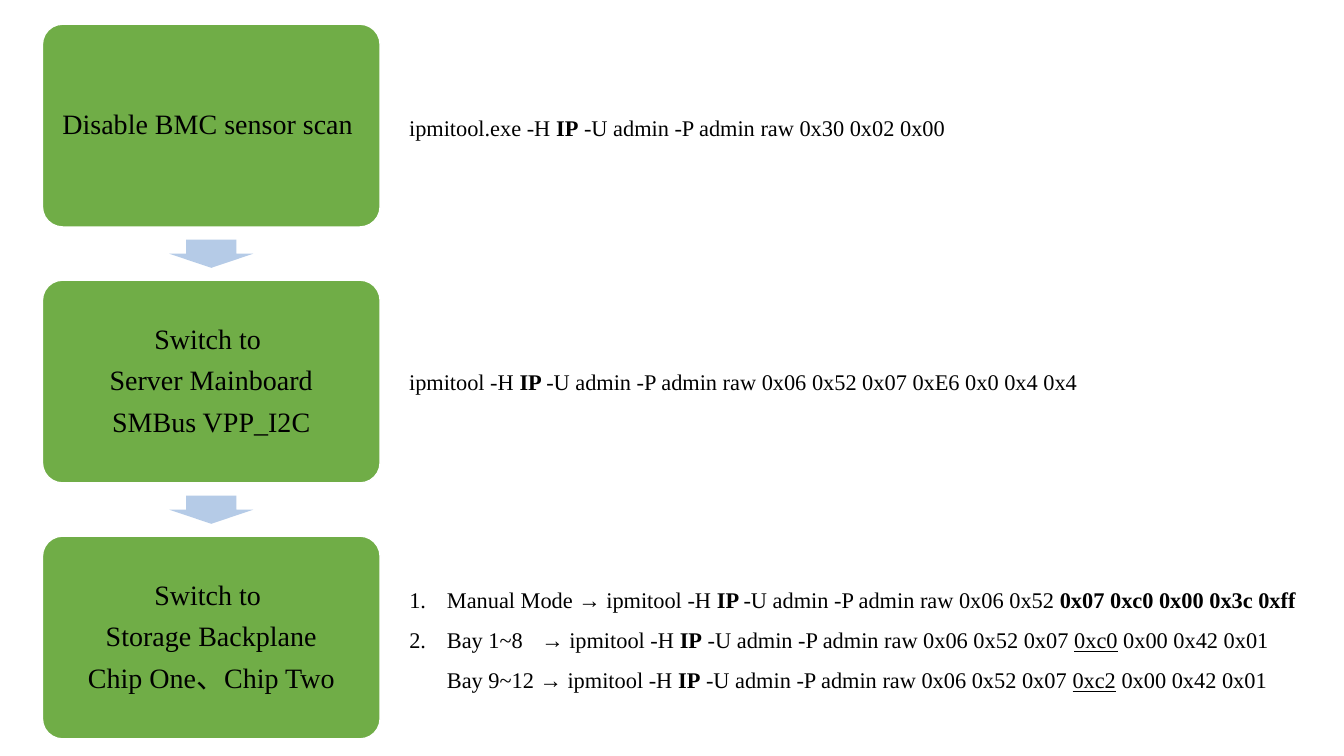
"""Build the slide showing the BMC backplane commands step by step."""

from dataclasses import dataclass

from lxml import etree
from pptx import Presentation
from pptx.dml.color import RGBColor
from pptx.enum.shapes import MSO_SHAPE
from pptx.enum.text import MSO_ANCHOR, MSO_AUTO_SIZE, PP_ALIGN
from pptx.oxml.ns import qn
from pptx.util import Cm, Pt

ROUNDED_BOX = MSO_SHAPE.ROUNDED_RECTANGLE
DOWN_ARROW = MSO_SHAPE.DOWN_ARROW
MIDDLE, TOP = MSO_ANCHOR.MIDDLE, MSO_ANCHOR.TOP
NO_AUTOFIT = MSO_AUTO_SIZE.NONE
CENTER, LEFT = PP_ALIGN.CENTER, PP_ALIGN.LEFT

COLORS = {"box": "70AD47", "arrow": "B5CBE7", "text": "000000", "outline": "FFFFFF"}
FONT = "Times New Roman"
STEP_PITCH = 6.45
BOX_LEFT, BOX_TOP, BOX_WIDTH, BOX_HEIGHT = 1.07, 0.61, 8.51, 5.11
ARROW_WIDTH, ARROW_HEIGHT, ARROW_GAP = 2.11, 0.71, 0.32
COMMAND_LEFT = 10.06
LIST_INDENT = 0.95
ARROW_TAB = 3.33


@dataclass(frozen=True)
class Span:
    text: str
    bold: bool = False
    underline: bool = False


@dataclass(frozen=True)
class Command:
    top: float
    width: float
    spans: tuple[Span, ...]


@dataclass(frozen=True)
class ListItem:
    numbered: bool
    spans: tuple[Span, ...]


def bay_spans(label: str, register: str) -> tuple[Span, ...]:
    """Return the spans of a command that addresses a group of bays."""
    return (
        Span(f"{label}→ ipmitool -H "),
        Span("IP", bold=True),
        Span(" -U admin -P admin raw 0x06 0x52 0x07 "),
        Span(register, underline=True),
        Span(" 0x00 0x42 0x01"),
    )


STEPS = (
    "Disable BMC sensor scan ",
    "Switch to \nServer Mainboard\nSMBus VPP_I2C",
    "Switch to \nStorage Backplane\nChip One、Chip Two",
)
COMMANDS = (
    Command(2.74, 14.76, (
        Span("ipmitool.exe -H "),
        Span("IP", bold=True),
        Span(" -U admin -P admin raw 0x30 0x02 0x00"),
    )),
    Command(9.14, 18.29, (
        Span("ipmitool -H "),
        Span("IP ", bold=True),
        Span("-U admin -P admin raw 0x06 0x52 0x07 0xE6 0x0 0x4 0x4"),
    )),
)
LIST_ITEMS = (
    ListItem(True, (
        Span("Manual Mode → ipmitool -H"),
        Span(" IP ", bold=True),
        Span("-U admin -P admin raw 0x06 0x52 "),
        Span("0x07 0xc0 0x00 0x3c 0xff", bold=True),
    )),
    ListItem(True, bay_spans("Bay 1~8\t", "0xc0")),
    ListItem(False, bay_spans("Bay 9~12 ", "0xc2")),
)


def rgb(name: str) -> RGBColor:
    """Return a named colour."""
    return RGBColor.from_string(COLORS[name])


def format_run(run, size: float) -> None:
    """Apply the slide's font to a run."""
    run.font.name = FONT
    run.font.size = Pt(size)
    run.font.color.rgb = rgb("text")


def add_spans(paragraph, spans: tuple[Span, ...]) -> None:
    """Write styled spans into a paragraph."""
    paragraph.alignment = LEFT
    for span in spans:
        run = paragraph.add_run()
        run.text = span.text
        format_run(run, 16)
        run.font.bold = span.bold
        run.font.underline = span.underline


def add_filled_shape(slide, kind, left: float, top: float, width: float, height: float,
                     color: str):
    """Add a flat filled shape without an outline."""
    shape = slide.shapes.add_shape(kind, Cm(left), Cm(top), Cm(width), Cm(height))
    shape.shadow.inherit = False
    shape.fill.solid()
    shape.fill.fore_color.rgb = rgb(color)
    shape.line.fill.background()
    return shape


def add_step(slide, text: str, top: float) -> None:
    """Add a rounded box holding one step."""
    box = add_filled_shape(slide, ROUNDED_BOX, BOX_LEFT, top, BOX_WIDTH, BOX_HEIGHT, "box")
    box.adjustments[0] = 0.1
    box.line.color.rgb = rgb("outline")
    box.line.width = Pt(1)
    frame = box.text_frame
    frame.word_wrap = True
    frame.vertical_anchor = MIDDLE
    frame.text = text
    for paragraph in frame.paragraphs:
        paragraph.alignment = CENTER
        paragraph.line_spacing = 0.9
        paragraph.space_after = Pt(8)
        for run in paragraph.runs:
            format_run(run, 20)


def add_arrow(slide, top: float) -> None:
    """Add a downward arrow centred under the boxes."""
    left = BOX_LEFT + (BOX_WIDTH - ARROW_WIDTH) / 2
    arrow = add_filled_shape(slide, DOWN_ARROW, left, top, ARROW_WIDTH, ARROW_HEIGHT, "arrow")
    arrow.adjustments[0] = 0.6
    arrow.adjustments[1] = 0.5


def add_command(slide, command: Command) -> None:
    """Add a one-line command beside its step."""
    box = slide.shapes.add_textbox(
        Cm(COMMAND_LEFT), Cm(command.top), Cm(command.width), Cm(0.94))
    box.text_frame.word_wrap = True
    add_spans(box.text_frame.paragraphs[0], command.spans)


def format_list_item(paragraph, numbered: bool) -> None:
    """Set the indent, number and tab stop of a list item."""
    paragraph.line_spacing = 1.5
    paragraph.space_before = Pt(0)
    properties = paragraph._p.get_or_add_pPr()
    properties.set("marL", str(Cm(LIST_INDENT)))
    properties.set("indent", str(-Cm(LIST_INDENT) if numbered else 0))
    if numbered:
        font = etree.SubElement(properties, qn("a:buFont"))
        font.set("typeface", FONT)
        number = etree.SubElement(properties, qn("a:buAutoNum"))
        number.set("type", "arabicPeriod")
    else:
        etree.SubElement(properties, qn("a:buNone"))
    tabs = etree.SubElement(properties, qn("a:tabLst"))
    tab = etree.SubElement(tabs, qn("a:tab"))
    tab.set("pos", str(Cm(ARROW_TAB)))
    tab.set("algn", "l")


def fill_list(body, items: tuple[ListItem, ...]) -> None:
    """Place the body placeholder and write the numbered list."""
    body.left, body.top = Cm(COMMAND_LEFT), Cm(14.3)
    body.width, body.height = Cm(23.37), Cm(3.33)
    frame = body.text_frame
    frame.word_wrap = True
    frame.auto_size = NO_AUTOFIT
    frame.vertical_anchor = TOP
    for index, item in enumerate(items):
        paragraph = frame.add_paragraph() if index else frame.paragraphs[0]
        add_spans(paragraph, item.spans)
        format_list_item(paragraph, item.numbered)


def main() -> None:
    """Build and save the presentation."""
    presentation = Presentation()
    presentation.slide_width, presentation.slide_height = Cm(33.87), Cm(19.05)
    slide = presentation.slides.add_slide(presentation.slide_layouts[1])
    title = slide.shapes.title.element
    title.getparent().remove(title)
    for index, text in enumerate(STEPS):
        top = BOX_TOP + index * STEP_PITCH
        add_step(slide, text, top)
        if index < len(STEPS) - 1:
            add_arrow(slide, top + BOX_HEIGHT + ARROW_GAP)
    for command in COMMANDS:
        add_command(slide, command)
    fill_list(slide.placeholders[1], LIST_ITEMS)
    presentation.save("out.pptx")


if __name__ == "__main__":
    main()
